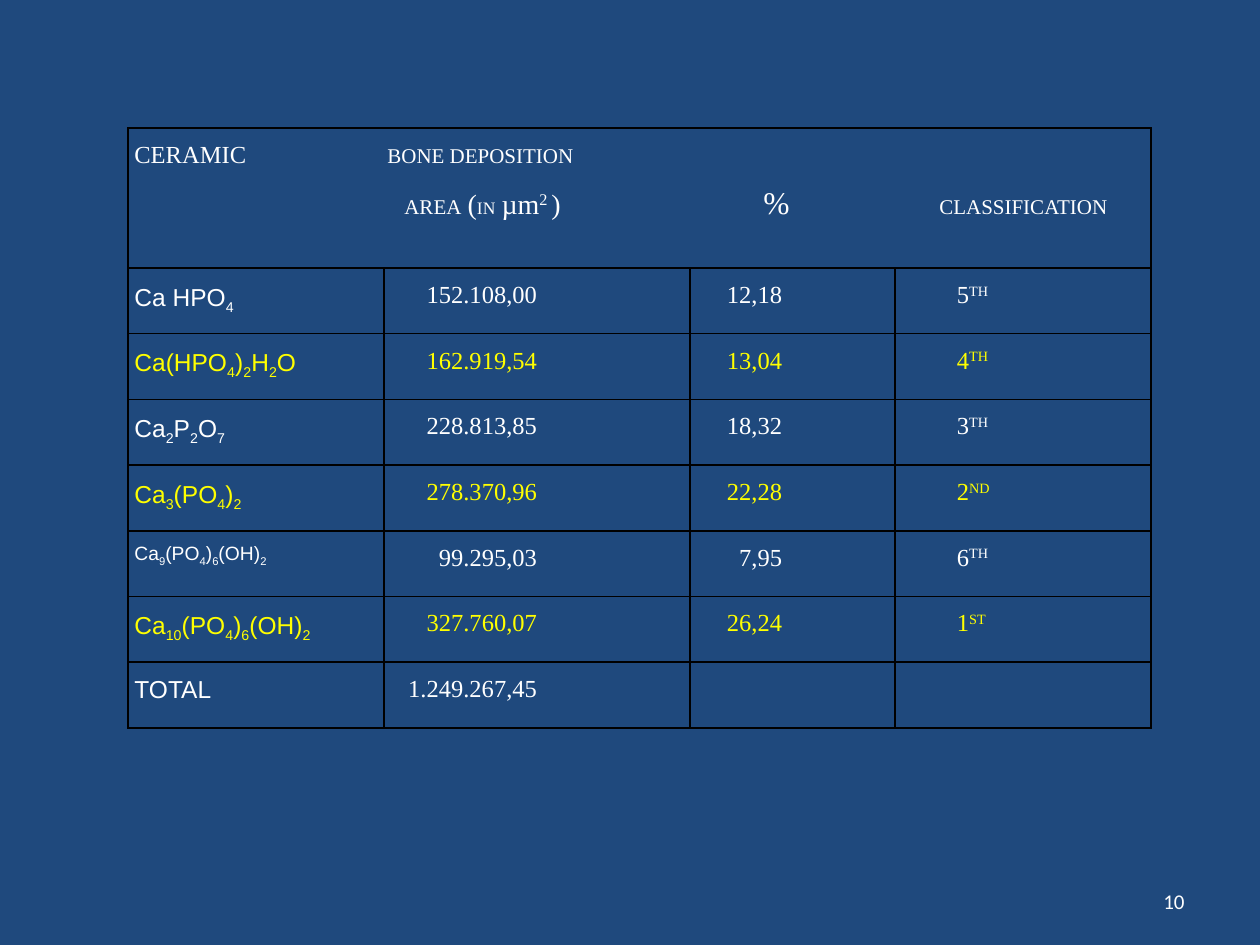
"""Build a slide with a table of bone deposition by ceramic."""
from itertools import groupby
from typing import NamedTuple

from lxml.etree import SubElement as Sub
from pptx import Presentation as Deck
from pptx.dml.color import RGBColor as Color
from pptx.enum.text import MSO_ANCHOR as Anchor, PP_ALIGN as Align
from pptx.oxml.ns import qn
from pptx.util import Pt

NAVY = Color(0x1F, 0x49, 0x7D)
WHITE = Color(0xFF, 0xFF, 0xFF)
YELLOW = Color(0xFF, 0xFF, 0x00)
BLACK = Color(0x00, 0x00, 0x00)
SERIF, SANS = "Times New Roman", "Arial"
SUB, SUPER = -25000, 30000
WIDTHS = (146.3, 174.9, 117.1, 146.3)
HEAD, ROW, INSET = 80, 37.55, 3.6


class Bit(NamedTuple):
    text: str
    size: float = 14
    base: int = 0


class Entry(NamedTuple):
    name: str
    area: str
    share: str = ""
    rank: str = ""
    color: Color = WHITE
    size: float = 14


class Line(NamedTuple):
    tabs: tuple[float, ...]
    bits: tuple[Bit, ...]


HEADER = (
    Line((144.6,), (Bit("CERAMIC\t"), Bit("BONE DEPOSITION", 12))),
    Line((154.3, 359.4, 460), (
        Bit("\t"), Bit("AREA", 12), Bit(" "), Bit("(", 16), Bit("IN", 10),
        Bit(" "), Bit("µm", 16), Bit("2 ", 16, SUPER), Bit(")\t", 16),
        Bit("%\t", 18), Bit("CLASSIFICATION", 12))),
)
ENTRIES = (
    Entry("Ca HPO4", "152.108,00", "12,18", "5TH"),
    Entry("Ca(HPO4)2H2O", "162.919,54", "13,04", "4TH", YELLOW),
    Entry("Ca2P2O7", "228.813,85", "18,32", "3TH"),
    Entry("Ca3(PO4)2", "278.370,96", "22,28", "2ND", YELLOW),
    Entry("Ca9(PO4)6(OH)2", "99.295,03", "7,95", "6TH", size=11),
    Entry("Ca10(PO4)6(OH)2", "327.760,07", "26,24", "1ST", YELLOW),
    Entry("TOTAL", "1.249.267,45"),
)


def write(para, bits, face: str, color: Color = WHITE) -> None:
    """Add styled runs to a paragraph."""
    para.line_spacing = 1.5
    for bit in bits:
        run = para.add_run()
        run.text = bit.text
        run.font.name, run.font.size = face, Pt(bit.size)
        run.font.color.rgb = color
        if bit.base:
            run._r.get_or_add_rPr().set("baseline", str(bit.base))


def set_tabs(para, stops: tuple[float, ...]) -> None:
    """Give a paragraph left tab stops."""
    para.line_spacing = 1.5
    tabs = Sub(para._p.get_or_add_pPr(), qn("a:tabLst"))
    for stop in stops:
        Sub(tabs, qn("a:tab"), pos=str(Pt(stop)), algn="l")


def frame(cell) -> None:
    """Give a cell thin black borders, no fill and tight margins."""
    props = cell._tc.get_or_add_tcPr()
    for side in ("lnL", "lnR", "lnT", "lnB"):
        edge = Sub(props, qn(f"a:{side}"), w=str(Pt(1)))
        fill = Sub(edge, qn("a:solidFill"))
        Sub(fill, qn("a:srgbClr"), val=str(BLACK))
    cell.fill.background()
    cell.margin_left = cell.margin_right = Pt(INSET)
    cell.margin_top = cell.margin_bottom = 0


def formula(entry: Entry) -> list[Bit]:
    """Split a formula so that its digits sit low."""
    return [Bit("".join(part), entry.size, SUB if low else 0)
            for low, part in groupby(entry.name, str.isdigit)]


def fill_row(cells, entry: Entry) -> None:
    """Write one ceramic into a row of cells."""
    name, area, share, rank = cells
    write(name.text_frame.paragraphs[0], formula(entry), SANS, entry.color)
    for cell, text, gap in ((area, entry.area, 87.5), (share, entry.share, 64.6)):
        if text:
            cell.margin_right = Pt(gap)
            para = cell.text_frame.paragraphs[0]
            para.alignment = Align.RIGHT
            write(para, (Bit(text),), SERIF, entry.color)
    if entry.rank:
        rank.margin_left = Pt(35.3)
        bits = Bit(entry.rank[0]), Bit(entry.rank[1:], base=SUPER)
        write(rank.text_frame.paragraphs[0], bits, SERIF, entry.color)


def add_grid(slide) -> None:
    """Draw the table with its merged header."""
    count = len(ENTRIES)
    shape = slide.shapes.add_table(
        count + 1, len(WIDTHS), Pt(73.2), Pt(73.2),
        Pt(sum(WIDTHS)), Pt(HEAD + count * ROW))
    grid = shape.table
    grid.first_row = grid.horz_banding = False
    for col, width in zip(grid.columns, WIDTHS):
        col.width = Pt(width)
    for row, height in zip(grid.rows, (HEAD, *[ROW] * count)):
        row.height = Pt(height)
    for cell in grid.iter_cells():
        frame(cell)
    head = grid.cell(0, 0)
    head.merge(grid.cell(0, len(WIDTHS) - 1))
    text = head.text_frame
    for para, line in zip((text.paragraphs[0], text.add_paragraph()), HEADER):
        set_tabs(para, line.tabs)
        write(para, line.bits, SERIF)
    for row, entry in zip(list(grid.rows)[1:], ENTRIES):
        fill_row(row.cells, entry)


def add_page(slide, text: str) -> None:
    """Put the page number at the lower right."""
    box = slide.shapes.add_textbox(Pt(516), Pt(500.5), Pt(168), Pt(28.75))
    body = box.text_frame
    body.word_wrap, body.vertical_anchor = True, Anchor.MIDDLE
    body.text = text
    para = body.paragraphs[0]
    para.alignment = Align.RIGHT
    font = para.runs[0].font
    font.name, font.size = "Calibri", Pt(12)
    font.color.rgb = WHITE


def main() -> None:
    """Make the deck and save it."""
    deck = Deck()
    deck.slide_width, deck.slide_height = Pt(720), Pt(540)
    slide = deck.slides.add_slide(deck.slide_layouts[6])
    slide.background.fill.solid()
    slide.background.fill.fore_color.rgb = NAVY
    add_grid(slide)
    add_page(slide, "10")
    deck.save("out.pptx")


if __name__ == "__main__":
    main()
